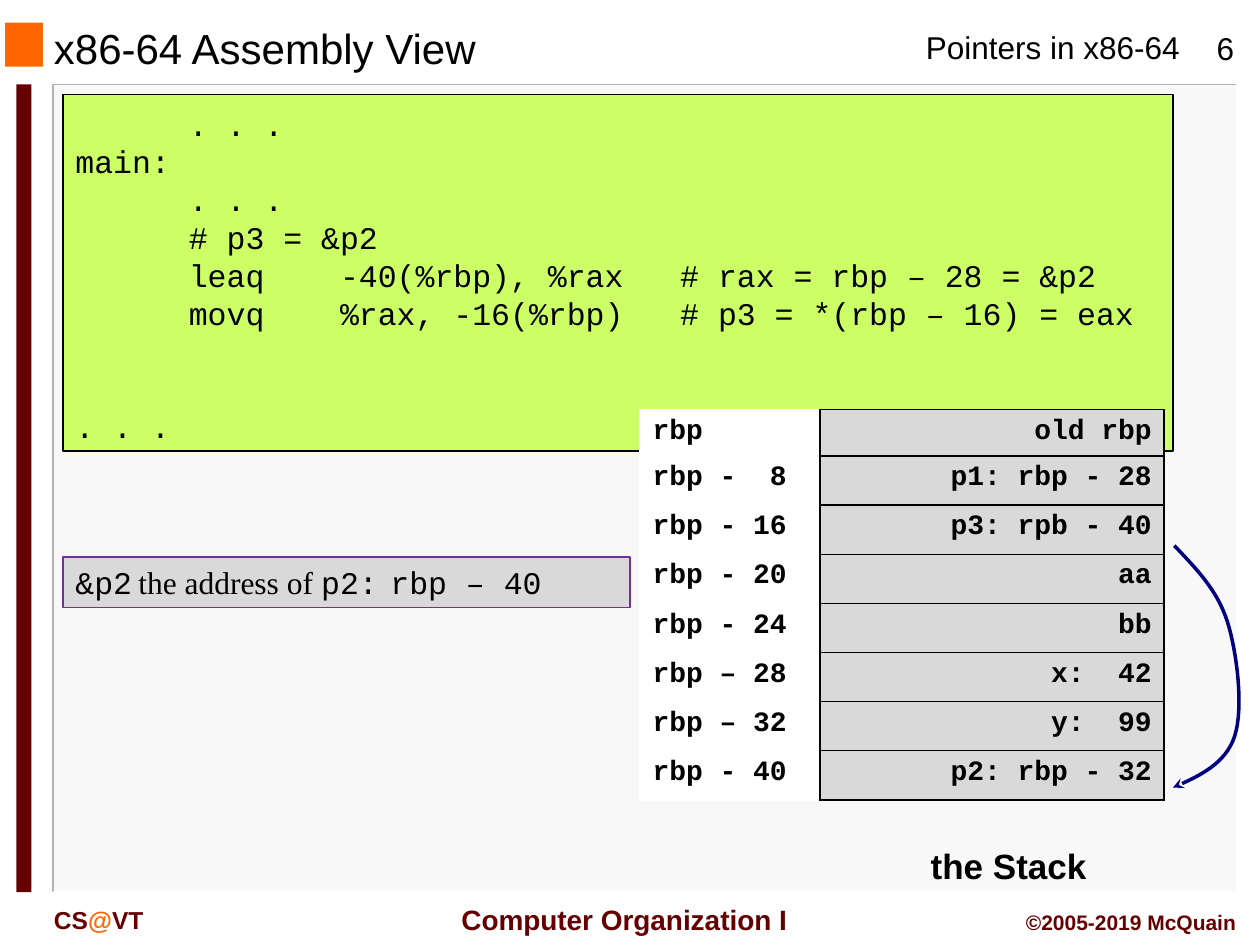
from lxml.etree import SubElement
from pptx import Presentation
from pptx.dml.color import RGBColor
from pptx.enum.shapes import MSO_SHAPE
from pptx.enum.text import MSO_ANCHOR, PP_ALIGN
from pptx.oxml.ns import qn
from pptx.util import Inches, Pt

BLACK, WHITE, MAROON, ORANGE, GRAY = "000000", "FFFFFF", "660000", "FF6600", "D9D9D9"
MONO = "Courier New"
CODE_TABS = (0.9, 2.1, 4.8)
CODE_LINES = [
    "\t. . .",
    "main:",
    "\t. . .",
    "\t# p3 = &p2",
    "\tleaq\t-40(%rbp), %rax\t# rax = rbp – 28 = &p2",
    "\tmovq\t%rax, -16(%rbp)\t# p3 = *(rbp – 16) = eax",
    ". . .",
]
STACK_ROWS = [
    ("rbp", "old rbp"),
    ("rbp -  8", "p1: rbp - 28"),
    ("rbp - 16", "p3: rpb - 40"),
    ("rbp - 20", "aa"),
    ("rbp - 24", "bb"),
    ("rbp – 28", "x:  42"),
    ("rbp – 32", "y:  99"),
    ("rbp - 40", "p2: rbp - 32"),
]
ARROW_START = (9.32, 4.33)
ARROW_CURVES = [
    ((9.49, 4.51), (9.66, 4.68), (9.74, 4.93)),
    ((9.82, 5.18), (9.87, 5.62), (9.8, 5.84)),
    ((9.73, 6.06), (9.52, 6.16), (9.31, 6.25)),
]


def rgb(color):
    """Turn a hex string into a colour."""
    return RGBColor.from_string(color)


def add_run(paragraph, text, size=18, font="Arial", color=BLACK, bold=False):
    """Add formatted text to a paragraph."""
    run = paragraph.add_run()
    run.text = text
    run.font.size = Pt(size)
    run.font.name = font
    run.font.bold = bold
    run.font.color.rgb = rgb(color)


def add_label(slide, box, runs, align=PP_ALIGN.LEFT, anchor=MSO_ANCHOR.TOP, wrap=True, **style):
    """Add a text box holding one line of (text, overrides) runs."""
    frame = slide.shapes.add_textbox(*map(Inches, box)).text_frame
    frame.word_wrap = wrap
    frame.vertical_anchor = anchor
    paragraph = frame.paragraphs[0]
    paragraph.alignment = align
    for text, overrides in runs:
        add_run(paragraph, text, **{**style, **overrides})


def add_panel(slide, box, fill, line=None):
    """Add a flat rectangle."""
    shape = slide.shapes.add_shape(MSO_SHAPE.RECTANGLE, *map(Inches, box))
    shape.shadow.inherit = False
    shape.fill.solid()
    shape.fill.fore_color.rgb = rgb(fill)
    if line:
        shape.line.color.rgb = rgb(line)
        shape.line.width = Pt(0.75)
    else:
        shape.line.fill.background()
    shape.text_frame.word_wrap = True
    return shape


def add_polyline(slide, points, color, width):
    """Add an open, unfilled outline through points in inches."""
    start, *rest = [(Inches(x), Inches(y)) for x, y in points]
    builder = slide.shapes.build_freeform(*start)
    builder.add_line_segments(rest, close=False)
    shape = builder.convert_to_shape()
    shape.shadow.inherit = False
    shape.fill.background()
    shape.line.color.rgb = rgb(color)
    shape.line.width = Pt(width)
    return shape


def curve_points(start, curves, steps=16):
    """Sample points along joined cubic curves."""
    points = [start]
    for first, second, end in curves:
        corners = list(zip(points[-1], first, second, end))
        for step in range(1, steps + 1):
            t = step / steps
            weights = ((1 - t) ** 3, 3 * t * (1 - t) ** 2, 3 * t * t * (1 - t), t ** 3)
            points.append(tuple(sum(w * c for w, c in zip(weights, axis)) for axis in corners))
    return points


def add_frame(slide, left, top, width, height):
    """Add the content backdrop with its edges and accents."""
    right, bottom = left + width, top + height
    add_panel(slide, (left, top, width, height), "F8F8F8")
    add_polyline(slide, [(right, top), (left, top), (left, bottom)], "B2B2B2", 1)
    add_polyline(slide, [(right, top), (right, bottom), (left, bottom)], WHITE, 1)
    add_panel(slide, (0.04, 0.18, 0.3, 0.35), ORANGE)
    add_panel(slide, (0.13, top, 0.12, height), MAROON)


def add_header(slide, top):
    """Add the title, topic and page number."""
    add_label(slide, (0.33, top + 0.01, 6.33, 0.38), [("x86-64 Assembly View", {})],
              anchor=MSO_ANCHOR.MIDDLE, size=24)
    add_label(slide, (7.25, top - 0.01, 2.24, 0.4), [("Pointers in x86-64", {})], wrap=False)
    add_label(slide, (9.39, top, 0.67, 0.4), [("6", {})], PP_ALIGN.CENTER)


def add_footer(slide, top):
    """Add the three footer labels."""
    add_label(slide, (0.33, top + 0.02, 1.5, 0.33),
              [("CS", {}), ("@", {"color": ORANGE}), ("VT", {})],
              size=14, color=MAROON, bold=True)
    add_label(slide, (3.5, top, 2.91, 0.37), [("Computer Organization I", {})],
              PP_ALIGN.CENTER, MSO_ANCHOR.MIDDLE, size=16, color=MAROON, bold=True)
    add_label(slide, (7.83, top + 0.06, 2.08, 0.3), [("©2005-2019 McQuain", {})],
              PP_ALIGN.RIGHT, size=12, color=MAROON, bold=True)


def add_code(slide, box):
    """Add the assembly listing, aligned with tab stops."""
    frame = add_panel(slide, box, "CCFF66", BLACK).text_frame
    frame.vertical_anchor = MSO_ANCHOR.TOP
    frame.margin_top = Inches(0.08)
    for index, line in enumerate(CODE_LINES):
        paragraph = frame.add_paragraph() if index else frame.paragraphs[0]
        paragraph.alignment = PP_ALIGN.LEFT
        paragraph.line_spacing = Pt(21.6)
        tabs = SubElement(paragraph._p.get_or_add_pPr(), qn("a:tabLst"))
        for position in CODE_TABS:
            SubElement(tabs, qn("a:tab"), pos=str(Inches(position)), algn="l")
        add_run(paragraph, line, font=MONO)
    paragraph.space_before = Pt(43.2)


def add_address_note(slide, box):
    """Add the note on the address of p2."""
    frame = add_panel(slide, box, GRAY, "7030A0").text_frame
    paragraph = frame.paragraphs[0]
    paragraph.alignment = PP_ALIGN.LEFT
    add_run(paragraph, "&p2", font=MONO)
    add_run(paragraph, "\tthe address of ", font="Times New Roman")
    add_run(paragraph, "p2:\trbp – 40", font=MONO)


def add_borders(cell):
    """Draw a black line on each side of a cell."""
    properties = cell._tc.get_or_add_tcPr()
    for index, side in enumerate(("lnL", "lnR", "lnT", "lnB")):
        line = properties.makeelement(qn(f"a:{side}"), {"w": str(Pt(1))})
        fill = SubElement(line, qn("a:solidFill"))
        SubElement(fill, qn("a:srgbClr"), val=BLACK)
        properties.insert(index, line)


def add_stack(slide, left, top, width, height):
    """Add the stack table, its caption and the pointer arrow."""
    shape = slide.shapes.add_table(len(STACK_ROWS), 2, *map(Inches, (left, top, width, height)))
    table = shape.table
    table.first_row = table.horz_banding = False
    table.columns[0].width = Inches(1.43)
    table.columns[1].width = Inches(width - 1.43)
    for index, (row, texts) in enumerate(zip(table.rows, STACK_ROWS)):
        row.height = Inches(0.39 if index else 0.37)
        formats = ((WHITE, PP_ALIGN.LEFT), (GRAY, PP_ALIGN.RIGHT))
        for cell, text, (fill, align) in zip(row.cells, texts, formats):
            cell.fill.solid()
            cell.fill.fore_color.rgb = rgb(fill)
            paragraph = cell.text_frame.paragraphs[0]
            paragraph.alignment = align
            add_run(paragraph, text, size=16, font=MONO, bold=True)
        add_borders(row.cells[1])
    add_label(slide, (left + 1.74, top + 3.4, 2.37, 0.44), [("the Stack", {})],
              PP_ALIGN.CENTER, size=20, bold=True)
    arrow = add_polyline(slide, curve_points(ARROW_START, ARROW_CURVES), "000080", 2)
    SubElement(arrow.line._get_or_add_ln(), qn("a:tailEnd"), type="stealth")


def main():
    """Build and save the slide."""
    presentation = Presentation()
    presentation.slide_width, presentation.slide_height = Inches(10), Inches(7.5)
    slide = presentation.slides.add_slide(presentation.slide_layouts[6])
    add_frame(slide, 0.42, 0.67, 9.4, 6.41)
    add_header(slide, 0.18)
    add_footer(slide, 7.11)
    add_code(slide, (0.5, 0.75, 8.81, 2.83))
    add_address_note(slide, (0.5, 4.42, 4.5, 0.4))
    add_stack(slide, 5.08, 3.25, 4.16, 3.1)
    presentation.save("out.pptx")


if __name__ == "__main__":
    main()
